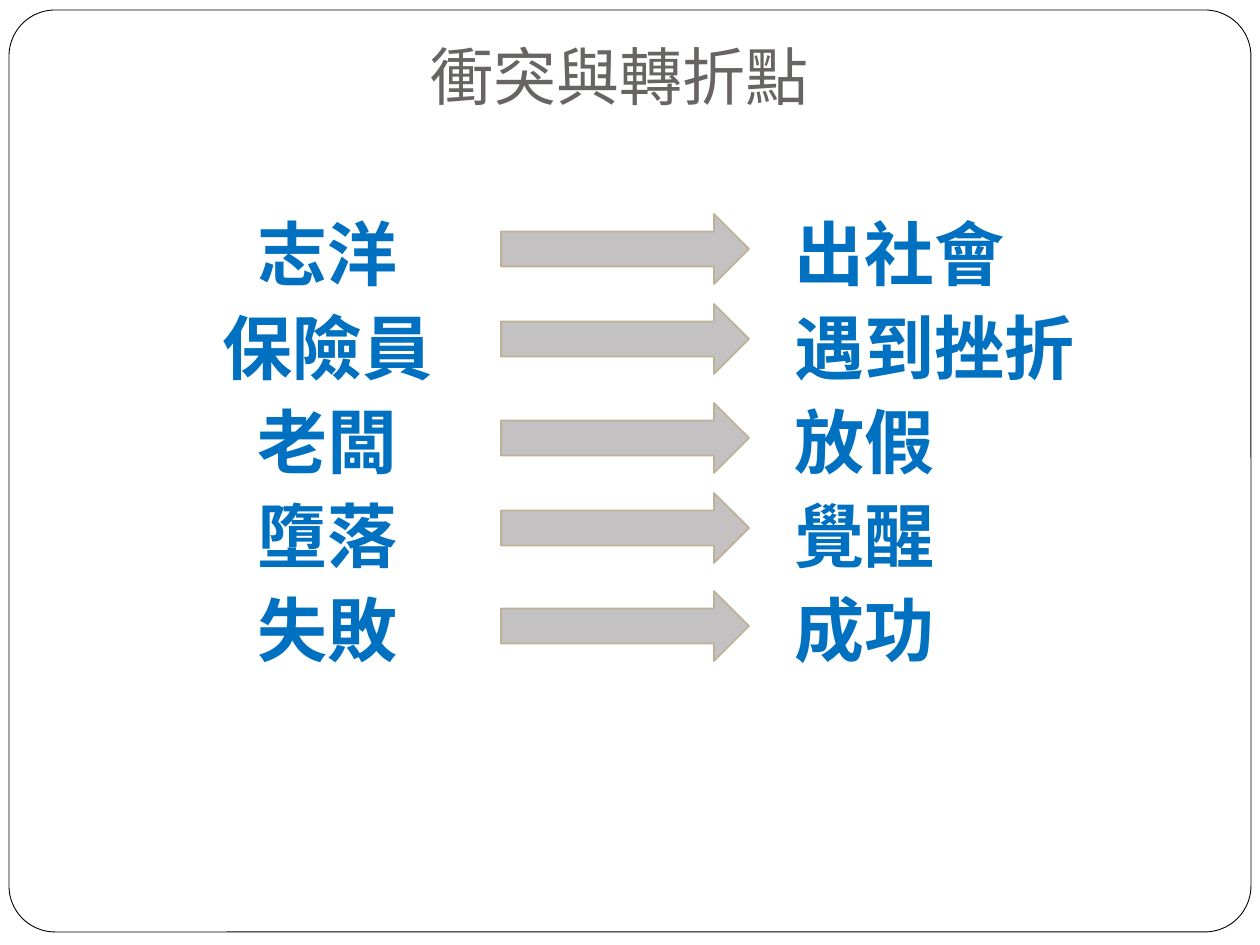
"""Build the slide that pairs each story conflict with its turning point."""
from dataclasses import dataclass

from lxml.etree import SubElement
from pptx import Presentation
from pptx.dml.color import RGBColor as Rgb
from pptx.enum.shapes import MSO_SHAPE as Kind
from pptx.enum.text import MSO_ANCHOR as Anchor, PP_ALIGN as Align
from pptx.oxml.ns import qn
from pptx.util import Emu, Pt

INK = {"page": "FFFFFF", "frame": "000000", "title": "696464",
       "word": "0070C0", "arrow": "C3C1C1", "edge": "BDB196"}


@dataclass(frozen=True)
class Box:
    left: int
    top: int
    width: int
    height: int


@dataclass(frozen=True)
class Turn:
    start: str
    end: str
    top: int


TURNS = [
    Turn("志洋", "出社會", 214),
    Turn("保險員", "遇到挫折", 304),
    Turn("老闆", "放假", 403),
    Turn("墮落", "覺醒", 493),
    Turn("失敗", "成功", 591),
]
STOPS = [(181, "ctr"), (648, "l")]


def px(count: int) -> Emu:
    return Emu(round(count * 914400 / 126))


def place(box: Box) -> list[Emu]:
    return [px(n) for n in (box.left, box.top, box.width, box.height)]


def tint(name: str) -> Rgb:
    return Rgb.from_string(INK[name])


def add_form(slide, kind: Kind, box: Box, fill: str, edge: str, line: float):
    form = slide.shapes.add_shape(kind, *place(box))
    form.shadow.inherit = False
    form.fill.solid()
    form.fill.fore_color.rgb = tint(fill)
    form.line.color.rgb = tint(edge)
    form.line.width = Pt(line)
    return form


def add_frame(slide, box: Box):
    frame = slide.shapes.add_textbox(*place(box)).text_frame
    frame.word_wrap = True
    return frame


def add_run(para, text: str, face: str, size: int, ink: str, bold: bool) -> None:
    run = para.add_run()
    run.text = text
    run.font.name = face
    run.font.size = Pt(size)
    run.font.bold = bold
    run.font.color.rgb = tint(ink)


def add_stops(para) -> None:
    tabs = SubElement(para._p.get_or_add_pPr(), qn("a:tabLst"))
    for where, align in STOPS:
        SubElement(tabs, qn("a:tab"), pos=str(px(where)), algn=align)


def add_title(slide, text: str) -> None:
    frame = add_frame(slide, Box(84, 26, 1071, 100))
    frame.vertical_anchor = Anchor.BOTTOM
    frame.margin_bottom = px(13)
    para = frame.paragraphs[0]
    para.alignment = Align.CENTER
    add_run(para, text, "Karla", 36, "title", False)


def add_turns(slide, turns: list[Turn]) -> None:
    frame = add_frame(slide, Box(134, 204, 1071, 630))
    for row, turn in enumerate(turns):
        para = frame.add_paragraph() if row else frame.paragraphs[0]
        para.alignment = Align.LEFT
        para.space_before = Pt(5.8)
        para.line_spacing = Pt(48)
        add_stops(para)
        for word in (turn.start, turn.end):
            add_run(para, f"\t{word}", "Times New Roman", 40, "word", True)
        add_form(slide, Kind.RIGHT_ARROW, Box(501, turn.top, 248, 70),
                 "arrow", "edge", 1)


def main() -> None:
    deck = Presentation()
    deck.slide_width, deck.slide_height = px(1260), px(945)
    slide = deck.slides.add_slide(deck.slide_layouts[6])
    border = add_form(slide, Kind.ROUNDED_RECTANGLE, Box(9, 10, 1242, 922),
                      "page", "frame", 0.5)
    border.adjustments[0] = 0.05
    add_title(slide, "衝突與轉折點")
    add_turns(slide, TURNS)
    deck.save("out.pptx")


if __name__ == "__main__":
    main()
